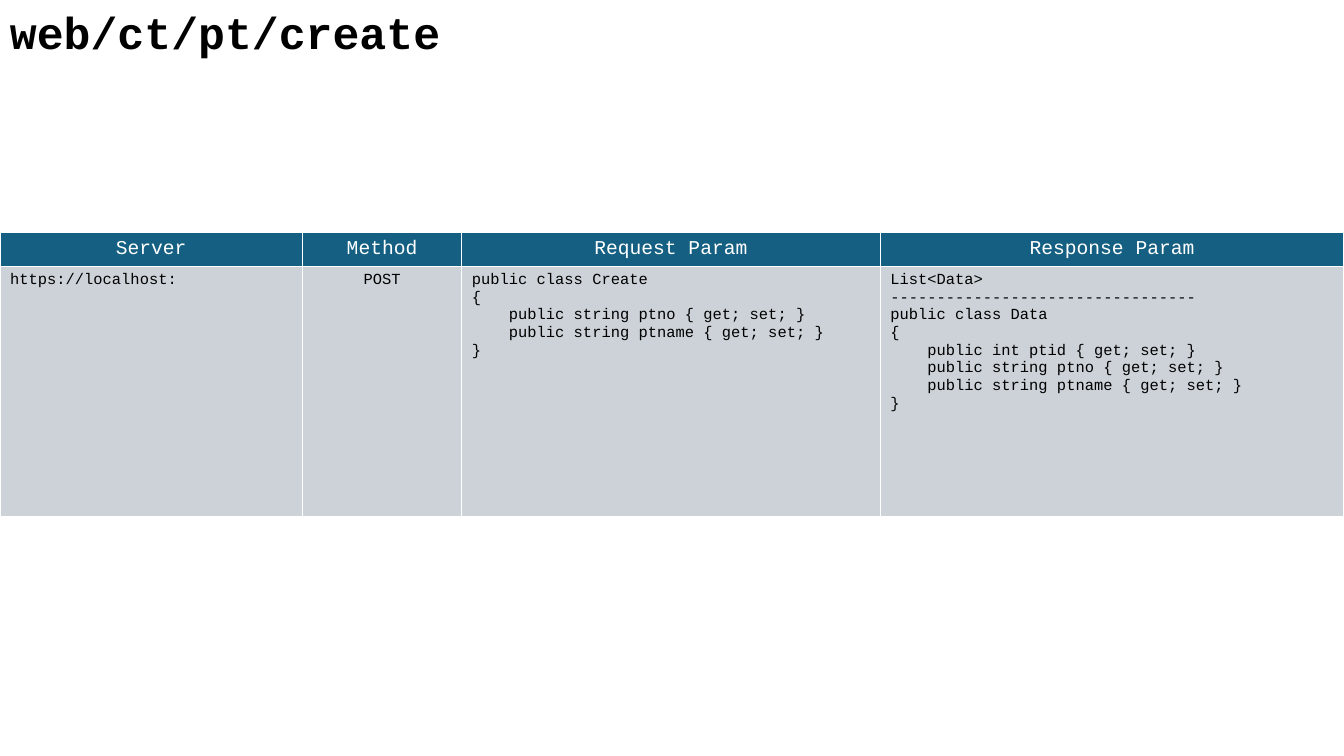
from lxml import etree
from pptx import Presentation
from pptx.dml.color import RGBColor
from pptx.enum import text
from pptx.oxml.ns import qn
from pptx.util import Inches, Pt

FONT = "Courier New"
WHITE, BLACK, TEAL, GREY = "FFFFFF", "000000", "156082", "CCD2D8"
WIDTHS = [3, 1.58, 4.15, 4.6]
HEIGHTS = [0.33, 2.48]
HEADS = ["Server", "Method", "Request Param", "Response Param"]
REQUEST = """public class Create
{
    public string ptno { get; set; }
    public string ptname { get; set; }
}"""
RESPONSE = """List<Data>
---------------------------------
public class Data
{
    public int ptid { get; set; }
    public string ptno { get; set; }
    public string ptname { get; set; }
}"""
BODY = ["https://localhost:", "POST", REQUEST, RESPONSE]


def color(value):
    return RGBColor.from_string(value)


def write(frame, words, size, ink, bold=False, center=False):
    frame.text = words
    for para in frame.paragraphs:
        para.alignment = text.PP_ALIGN.CENTER if center else text.PP_ALIGN.LEFT
        para.font.name = FONT
        para.font.size = Pt(size)
        para.font.bold = bold
        para.font.color.rgb = color(ink)


def border(cell, ink, width):
    props = cell._tc.get_or_add_tcPr()
    for side in ("lnL", "lnR", "lnT", "lnB"):
        line = etree.SubElement(props, qn("a:" + side), w=str(Pt(width)))
        fill = etree.SubElement(line, qn("a:solidFill"))
        etree.SubElement(fill, qn("a:srgbClr"), val=ink)


def add_title(slide, words):
    box = slide.shapes.add_textbox(0, 0, Inches(9.45), Inches(0.64))
    box.text_frame.word_wrap = True
    write(box.text_frame, words, 32, BLACK, bold=True)


def add_grid(slide, rows):
    table = slide.shapes.add_table(
        len(rows), len(WIDTHS), 0, Inches(2.31),
        Inches(sum(WIDTHS)), Inches(sum(HEIGHTS))).table
    for col, width in zip(table.columns, WIDTHS):
        col.width = Inches(width)
    for r, row in enumerate(rows):
        table.rows[r].height = Inches(HEIGHTS[r])
        head = r == 0
        for c, words in enumerate(row):
            cell = table.cell(r, c)
            border(cell, WHITE, 1)
            cell.fill.solid()
            cell.fill.fore_color.rgb = color(TEAL if head else GREY)
            write(cell.text_frame, words, 14 if head else 11,
                  WHITE if head else BLACK, center=head or c == 1)


def main():
    deck = Presentation()
    deck.slide_width, deck.slide_height = Inches(13.33), Inches(7.5)
    slide = deck.slides.add_slide(deck.slide_layouts[6])
    # Endpoint name
    add_title(slide, "web/ct/pt/create")
    # Endpoint details
    add_grid(slide, [HEADS, BODY])
    deck.save("out.pptx")


if __name__ == "__main__":
    main()
